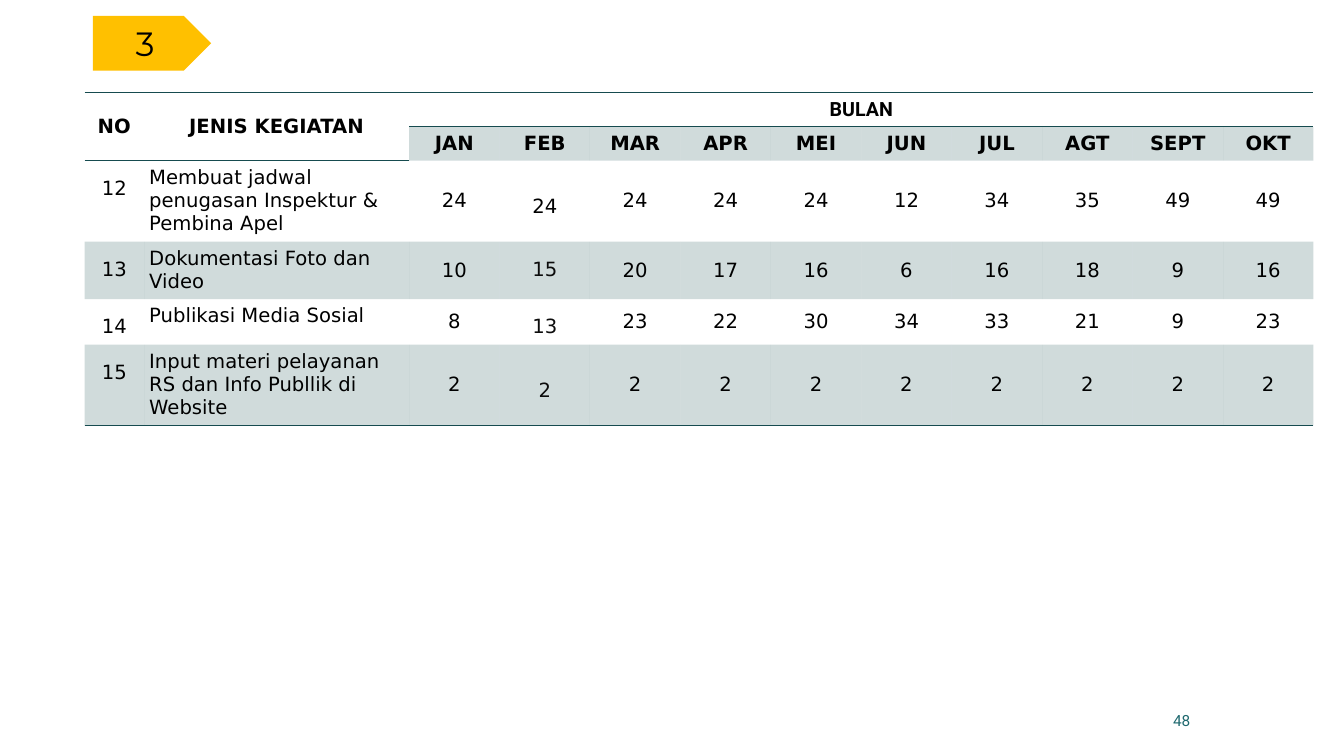
from lxml.etree import SubElement
from pptx import Presentation
from pptx.dml.color import RGBColor
from pptx.enum.shapes import MSO_SHAPE as Shape
from pptx.enum.text import MSO_ANCHOR as Anchor, PP_ALIGN as Align
from pptx.oxml import parse_xml
from pptx.oxml.ns import nsdecls, qn
from pptx.util import Cm, Pt

COLORS = {"teal": "164B4F", "number": "1F696F", "gold": "FFC000", "ink": "000000", "soft": "0C0C0C"}
FORMATS = {
    "body": {"name": "DejaVu Sans", "size": Pt(14), "bold": False},
    "head": {"name": "DejaVu Sans", "size": Pt(14), "bold": True},
    "group": {"name": "Roboto", "size": Pt(14), "bold": True},
    "number": {"name": "Roboto", "size": Pt(11), "bold": False},
    "tag": {"name": "Montserrat", "size": Pt(24), "bold": False},
}
PLAIN_TABLE = "{2D5ABB26-0587-4C30-8999-92F81FD0307C}"
MONTHS = ["JAN", "FEB", "MAR", "APR", "MEI", "JUN", "JUL", "AGT", "SEPT", "OKT"]
ACTIVITIES = [
    ("12", "Membuat jadwal penugasan Inspektur & Pembina Apel", [24, 24, 24, 24, 24, 12, 34, 35, 49, 49]),
    ("13", "Dokumentasi Foto dan Video", [10, 15, 20, 17, 16, 6, 16, 18, 9, 16]),
    ("14", "Publikasi Media Sosial", [8, 13, 23, 22, 30, 34, 33, 21, 9, 23]),
    ("15", "Input materi pelayanan RS dan Info Publlik di Website", [2] * 10),
]
COLUMN_WIDTHS = [1.5, 6.68] + [2.28] * len(MONTHS)
ROW_HEIGHTS = [0.83, 0.83, 2.0, 1.41, 1.13, 2.0]


class ActivityPage:
    def __init__(self, deck):
        self.page = deck.slides.add_slide(deck.slide_layouts[6])

    def label(self, frame, text, style, color="ink", align=Align.CENTER, spacing=None):
        para = frame.paragraphs[0]
        para.alignment = align
        para.line_spacing = spacing
        span = para.add_run()
        span.text = text
        for key, value in FORMATS[style].items():
            setattr(span.font, key, value)
        span.font.color.rgb = RGBColor.from_string(COLORS[color])

    def tag(self, text, *place):
        shape = self.page.shapes.add_shape(Shape.PENTAGON, *map(Cm, place))
        shape.shadow.inherit = False
        shape.fill.solid()
        shape.fill.fore_color.rgb = RGBColor.from_string(COLORS["gold"])
        shape.line.fill.background()
        shape.text_frame.vertical_anchor = Anchor.MIDDLE
        self.label(shape.text_frame, text, "tag")

    def number(self, text, *place):
        box = self.page.shapes.add_textbox(*map(Cm, place))
        box.text_frame.word_wrap = True
        box.text_frame.vertical_anchor = Anchor.MIDDLE
        self.label(box.text_frame, text, "number", "number", Align.RIGHT)

    def grid(self, left, top, widths, heights):
        place = map(Cm, (left, top, sum(widths), sum(heights)))
        frame = self.page.shapes.add_table(len(heights), len(widths), *place)
        table = frame.table
        table.first_row = table.horz_banding = False
        table._tbl.tblPr.find(qn("a:tableStyleId")).text = PLAIN_TABLE
        for column, width in zip(table.columns, widths):
            column.width = Cm(width)
        for row, height in zip(table.rows, heights):
            row.height = Cm(height)
        return table

    def cell(self, cell, shaded, edges):
        for side in ("left", "right", "top", "bottom"):
            setattr(cell, f"margin_{side}", Cm(0.13))
        cell.vertical_anchor = Anchor.MIDDLE
        if shaded:
            cell.fill.solid()
            cell.fill.fore_color.rgb = RGBColor.from_string(COLORS["teal"])
            tint = cell._tc.tcPr.find(qn("a:solidFill"))[0]
            SubElement(tint, qn("a:alpha"), val="20000")
        else:
            cell.fill.background()
        for position, edge in enumerate(edges):
            line = parse_xml(
                f'<a:ln{edge} {nsdecls("a")} w="12700"><a:solidFill>'
                f'<a:srgbClr val="{COLORS["teal"]}"/></a:solidFill></a:ln{edge}>'
            )
            cell._tc.tcPr.insert(position, line)

    def activity_table(self):
        table = self.grid(2.13, 2.34, COLUMN_WIDTHS, ROW_HEIGHTS)
        last = len(ROW_HEIGHTS) - 1
        for row in range(last + 1):
            for column in range(len(COLUMN_WIDTHS)):
                shaded = row % 2 == 1 and (row > 1 or column > 1)
                ruled = row == last or (row == 1 and column < 2)
                edges = "TB" if row == 0 else "B" if ruled else ""
                self.cell(table.cell(row, column), shaded, edges)

        for column, text in enumerate(["NO", "JENIS KEGIATAN"]):
            table.cell(0, column).merge(table.cell(1, column))
            self.label(table.cell(0, column).text_frame, text, "head")
        table.cell(0, 2).merge(table.cell(0, len(COLUMN_WIDTHS) - 1))
        self.label(table.cell(0, 2).text_frame, "BULAN", "group")
        for column, month in enumerate(MONTHS, 2):
            self.label(table.cell(1, column).text_frame, month, "head")

        for row, (number, activity, counts) in enumerate(ACTIVITIES, 2):
            for column, text in enumerate([number, activity, *map(str, counts)]):
                cell = table.cell(row, column)
                february = column == 3
                if column < 2 or (february and number in ("13", "14")):
                    cell.vertical_anchor = Anchor.TOP
                color = "soft" if february and row > 2 else "ink"
                align = Align.LEFT if column == 1 else Align.CENTER
                spacing = 1.5 if column in (0, 3) else None
                self.label(cell.text_frame, text, "body", color, align, spacing)


def main():
    deck = Presentation()
    deck.slide_width, deck.slide_height = Cm(33.87), Cm(19.05)
    page = ActivityPage(deck)
    page.number("48", 22.35, 17.66, 7.9, 1.01)
    page.activity_table()
    page.tag("3", 2.34, 0.4, 2.98, 1.38)
    deck.save("out.pptx")


if __name__ == "__main__":
    main()
